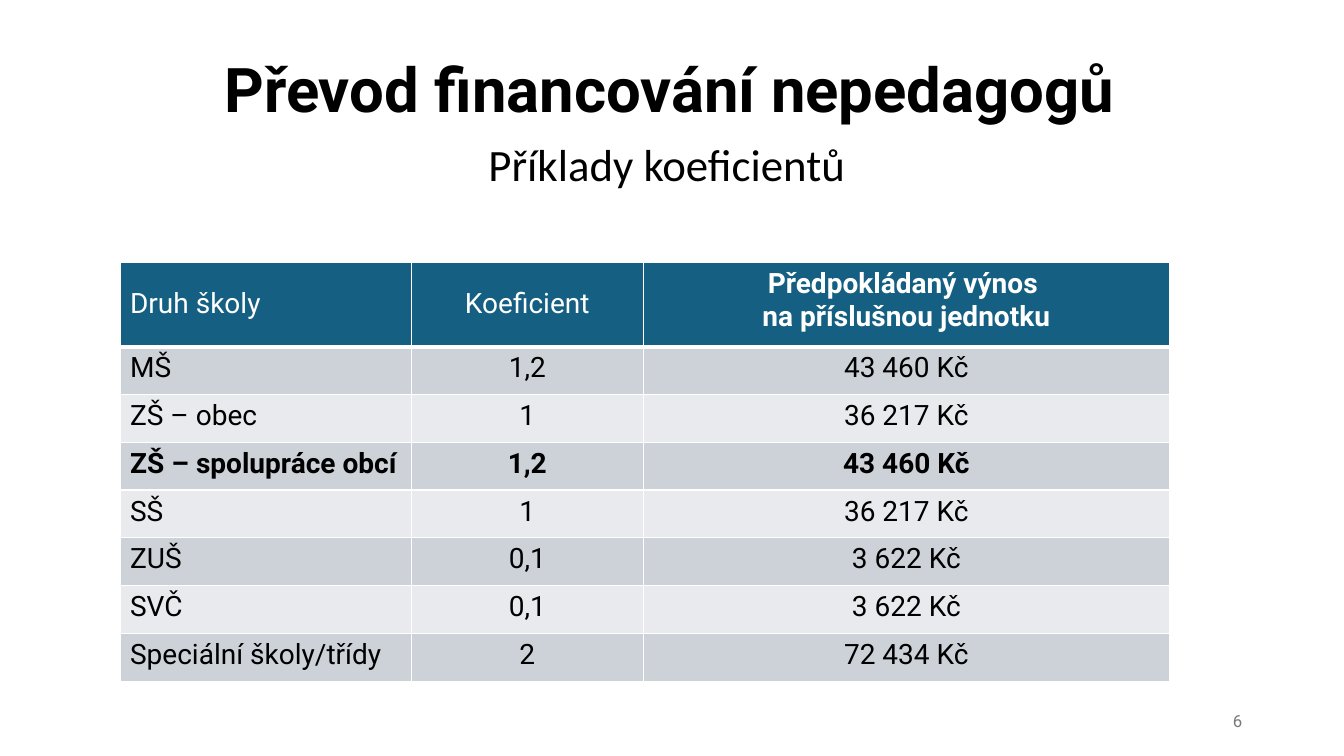
from lxml.etree import SubElement
from pptx import Presentation
from pptx.dml.color import RGBColor
from pptx.enum.text import MSO_ANCHOR, PP_ALIGN
from pptx.oxml.ns import qn
from pptx.util import Inches, Pt

BLACK, WHITE, GREY = "000000", "FFFFFF", "797979"
HEADER_BLUE, BAND_DARK, BAND_LIGHT = "156082", "CCD2D8", "E8EAED"
COLUMN_WIDTHS = (2.89, 2.3, 5.22)
HEADER_HEIGHT, TABLE_HEIGHT = 0.84, 4.16
HEADINGS = ("Druh školy", "Koeficient", "Předpokládaný výnos \nna příslušnou jednotku")
SCHOOLS = (
    ("MŠ", "1,2", "43 460 Kč"),
    ("ZŠ – obec", "1", "36 217 Kč"),
    ("ZŠ – spolupráce obcí", "1,2", "43 460 Kč"),
    ("SŠ", "1", "36 217 Kč"),
    ("ZUŠ", "0,1", "3 622 Kč"),
    ("SVČ", "0,1", "3 622 Kč"),
    ("Speciální školy/třídy", "2", "72 434 Kč"),
)
HIGHLIGHTED_SCHOOL = "ZŠ – spolupráce obcí"


def color(value):
    return RGBColor.from_string(value)


def write(frame, text, size=20, font="Roboto", fill=BLACK, bold=False,
          align=PP_ALIGN.CENTER, anchor=MSO_ANCHOR.TOP, spacing=None):
    frame.word_wrap = True
    frame.text = text
    frame.vertical_anchor = anchor
    for paragraph in frame.paragraphs:
        paragraph.alignment = align
        paragraph.line_spacing = spacing
        for run in paragraph.runs:
            run.font.name = font
            run.font.size = Pt(size)
            run.font.bold = bold
            run.font.color.rgb = color(fill)


def add_text(slide, text, left, top, width, height, **style):
    box = slide.shapes.add_textbox(Inches(left), Inches(top), Inches(width), Inches(height))
    write(box.text_frame, text, **style)


def add_title(slide, text):
    title = slide.shapes.title
    title.left, title.top = Inches(0.72), Inches(0.29)
    title.width, title.height = Inches(12), Inches(1.25)
    write(title.text_frame, text, size=44, bold=True, anchor=MSO_ANCHOR.MIDDLE, spacing=0.9)


def set_borders(cell, bottom):
    properties = cell._tc.get_or_add_tcPr()
    for side, width in (("L", 1), ("R", 1), ("T", 1), ("B", bottom)):
        line = SubElement(properties, qn(f"a:ln{side}"), w=str(Pt(width)))
        SubElement(SubElement(line, qn("a:solidFill")), qn("a:srgbClr"), val=WHITE)


def fill_cell(cell, text, background, bottom=1, anchor=MSO_ANCHOR.TOP, **style):
    write(cell.text_frame, text, **style)
    cell.vertical_anchor = anchor
    set_borders(cell, bottom)
    cell.fill.solid()
    cell.fill.fore_color.rgb = color(background)


def add_coefficients(slide):
    table = slide.shapes.add_table(
        len(SCHOOLS) + 1, len(COLUMN_WIDTHS), Inches(1.19), Inches(2.6),
        Inches(sum(COLUMN_WIDTHS)), Inches(TABLE_HEIGHT)).table
    for column, width in zip(table.columns, COLUMN_WIDTHS):
        column.width = Inches(width)
    for row in table.rows:
        row.height = Inches((TABLE_HEIGHT - HEADER_HEIGHT) / len(SCHOOLS))
    table.rows[0].height = Inches(HEADER_HEIGHT)

    alignments = (PP_ALIGN.LEFT, PP_ALIGN.CENTER, PP_ALIGN.CENTER)
    for index, (heading, align) in enumerate(zip(HEADINGS, alignments)):
        is_yield = index == 2
        fill_cell(table.cell(0, index), heading, HEADER_BLUE, bottom=3, fill=WHITE,
                  align=align, bold=is_yield,
                  anchor=MSO_ANCHOR.TOP if is_yield else MSO_ANCHOR.MIDDLE)
    for number, school in enumerate(SCHOOLS, start=1):
        band = BAND_DARK if number % 2 else BAND_LIGHT
        for index, (value, align) in enumerate(zip(school, alignments)):
            fill_cell(table.cell(number, index), value, band, align=align,
                      bold=school[0] == HIGHLIGHTED_SCHOOL)


def main():
    presentation = Presentation()
    presentation.slide_width, presentation.slide_height = Inches(13.33), Inches(7.5)
    slide = presentation.slides.add_slide(presentation.slide_layouts[5])
    add_title(slide, "Převod financování nepedagogů ")
    add_text(slide, "Příklady koeficientů", 0.55, 1.31, 12.13, 4.48, size=32, font="Calibri")
    add_coefficients(slide)
    add_text(slide, "6", 9.42, 6.95, 3, 0.4, size=12, fill=GREY,
             align=PP_ALIGN.RIGHT, anchor=MSO_ANCHOR.MIDDLE)
    presentation.save("out.pptx")


if __name__ == "__main__":
    main()
